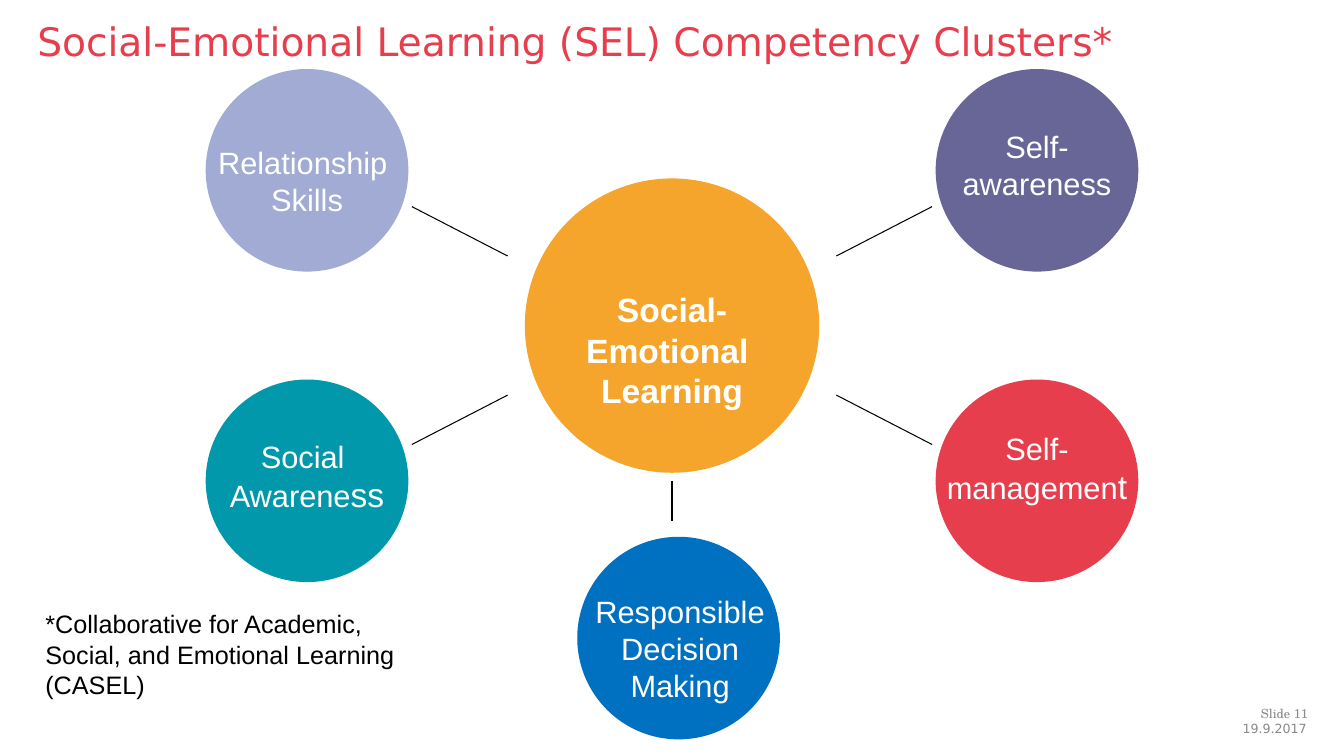
from itertools import product
from pptx import Presentation
from pptx.dml.color import RGBColor as Rgb
from pptx.enum.shapes import MSO_CONNECTOR as Link, MSO_SHAPE as Kind
from pptx.enum.text import MSO_ANCHOR as Anchor, PP_ALIGN as Align
from pptx.oxml.ns import qn
from pptx.util import Inches, Pt

WIDE, HIGH = 13.33, 7.5
MID_X, MID_Y = WIDE / 2, 3.23  # centre of the hub
DX, DY = 3.62, 1.54  # from the hub to the corner circles
HUB, SPOKE = 2.92, 2.01  # diameters
PAD = 0.16

deck = Presentation()
deck.slide_width, deck.slide_height = Inches(WIDE), Inches(HIGH)
slide = deck.slides.add_slide(deck.slide_layouts[6])
shapes = slide.shapes


def disc(x, y, size, fill):
    """Draw a plain circle around the centre x, y."""
    shape = shapes.add_shape(Kind.OVAL, *map(Inches, (x - size / 2, y - size / 2, size, size)))
    shape.shadow.inherit = False
    shape.fill.solid()
    shape.fill.fore_color.rgb = Rgb.from_string(fill)
    shape.line.fill.background()


def label(box, lines, size, color="FFFFFF", font="Arial", align=Align.CENTER,
          pad=(PAD, PAD), wrap=True, bold=False, anchor=Anchor.TOP):
    """Add a text box; a part of a line after "|" is set 2 pt larger."""
    frame = shapes.add_textbox(*map(Inches, box)).text_frame
    side, top = map(Inches, pad)
    form = dict(word_wrap=wrap, vertical_anchor=anchor, margin_left=side,
                margin_right=side, margin_top=top, margin_bottom=top)
    for key, value in form.items():
        setattr(frame, key, value)
    for row, line in enumerate(lines):
        para = frame.add_paragraph() if row else frame.paragraphs[0]
        para.alignment = align
        for part, text in enumerate(line.split("|")):
            run = para.add_run()
            run.text = text
            form = dict(name=font, size=Pt(size + 2 * part), bold=bold)
            for key, value in form.items():
                setattr(run.font, key, value)
            run.font.color.rgb = Rgb.from_string(color)


# Title and footer
label((0.37, 0.13, 12.6, 0.55), ["Social-Emotional Learning (SEL) Competency Clusters*"], 28,
      "E63E4D", "DejaVu Sans", Align.LEFT, (0, 0), anchor=Anchor.MIDDLE)
for box, text, font in [
    ((11.11, 7.15, 1.85, 0.2), "19.9.2017", "DejaVu Sans"),
    ((11.48, 7, 1.49, 0.14), "Slide 11", "TeX Gyre Schola"),
]:
    label(box, [text], 9, "898989", font, Align.RIGHT, (0, 0))

# Hub
disc(MID_X, MID_Y, HUB, "F5A52B")
label((MID_X - 1.34, 2.71, 2.68, 1.2), ["Social-Emotional ", "Learning"], 24, wrap=False, bold=True)

# Corner circles: side, level, fill, label top, lines
for side, level, fill, top, lines in [
    (-1, -1, "A1ABD3", 1.38, ["Relationship ", "Skills"]),
    (-1, 1, "0098AA", 4.29, ["Social ", "Awarene|ss"]),
    (1, -1, "676697", 1.22, ["Self-", "awareness"]),
    (1, 1, "E63E4D", 4.21, ["Self-", "managemen|t"]),
]:
    x = MID_X + side * DX
    disc(x, MID_Y + level * DY, SPOKE, fill)
    label((x - 1.34, top, 2.68, 0.86), lines, 22, pad=(0.1, 0.05))

# Bottom circle
disc(6.73, 6.33, SPOKE, "0070C0")
label((5.72, 5.72, 2.05, 1.02), ["Responsible Decision Making"], 22)

# Spokes
spokes = [(MID_X + 1.63 * side, MID_Y + 0.69 * level, MID_X + 2.58 * side, MID_Y + 1.18 * level)
          for side, level in product((-1, 1), repeat=2)]
spokes.append((MID_X, 4.77, MID_X, 5.17))
for ends in spokes:
    line = shapes.add_connector(Link.STRAIGHT, *map(Inches, ends))
    line.line.width = Pt(0.75)
    line.line.color.rgb = Rgb.from_string("000000")
    props = line._element.spPr
    props.append(props.makeelement(qn("a:effectLst"), {}))

# Footnote
label((0.29, 5.88, 3.78, 0.94),
      ["*Collaborative for Academic, Social, and Emotional Learning (CASEL)"],
      18, "000000", align=Align.LEFT)

deck.save("out.pptx")
